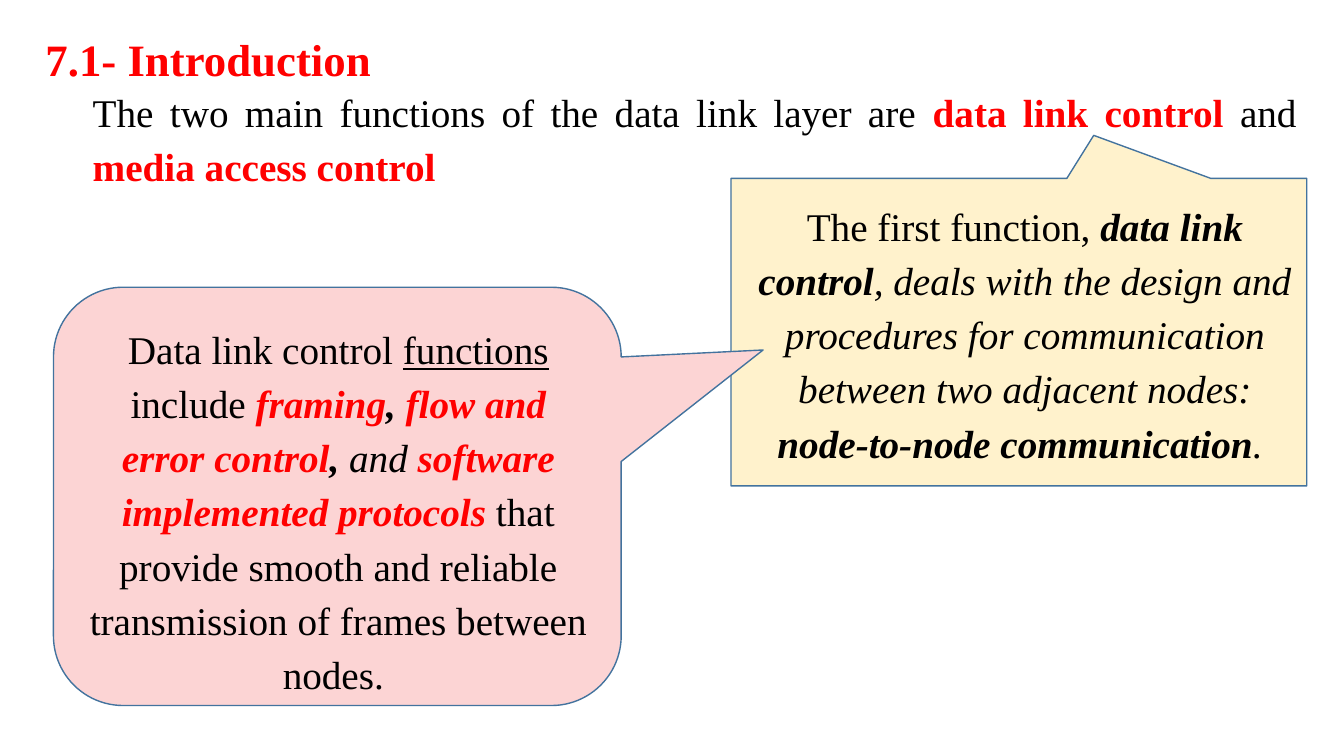
"""Build the introduction slide on the data link layer."""
from lxml.etree import SubElement
from pptx import Presentation
from pptx.dml.color import RGBColor as Rgb
from pptx.enum.shapes import MSO_SHAPE as Shape
from pptx.enum.text import MSO_ANCHOR as Anchor, PP_ALIGN as Align
from pptx.oxml.ns import qn
from pptx.util import Inches, Pt

WIDE, HIGH = Inches(13.33), Inches(7.5)
FONT = "Times New Roman"
HUES = {"ink": "000000", "key": "FF0000", "edge": "43739E",
        "sand": "FFF2CC", "rose": "FCD4D4"}

TITLE = [("7.1- Introduction", "br")]
LEAD = [("The two main functions of the data link layer are ", ""),
        ("data link control ", "br"), ("and ", ""),
        ("media access control ", "br")]
FIRST = [("The first function, ", ""), ("data link control", "bi"),
         (", deals with the design and procedures for communication "
          "between two adjacent nodes: ", "i"),
         ("node-to-node communication", "bi"), (". ", "i")]
TASKS = [("Data link control ", ""), ("functions", "u"), (" include ", ""),
         ("framing", "bir"), (", ", "bi"), ("flow and error control", "bir"),
         (", ", "bi"), ("and ", "i"),
         ("software implemented protocols", "bir"),
         (" that provide smooth and reliable transmission of frames "
          "between nodes. ", "")]


def hue(name):
    """Return the named colour."""
    return Rgb.from_string(HUES[name])


def area(left, top, width, height):
    """Turn percentages of the slide into lengths."""
    return [int(part * side / 100) for part, side in
            zip((left, top, width, height), (WIDE, HIGH) * 2)]


def write(frame, runs, size=28, space=1.15, align=Align.JUSTIFY, wrap=True):
    """Fill a frame with runs flagged b(old), i(talic), u(nderlined), r(ed)."""
    frame.word_wrap = wrap
    frame.vertical_anchor = Anchor.TOP
    para = frame.paragraphs[0]
    para.alignment = align
    para.line_spacing = space
    para.space_before = Pt(0)
    for text, flags in runs:
        run = para.add_run()
        run.text = text
        font = run.font
        font.name, font.size = FONT, Pt(size)
        font.bold, font.italic = "b" in flags, "i" in flags
        font.underline = "u" in flags
        font.color.rgb = hue("key" if "r" in flags else "ink")


def place(holder, spot):
    """Move a placeholder to its spot."""
    holder.left, holder.top, holder.width, holder.height = area(*spot)


def plain(frame):
    """Drop the bullet and indent of a body frame."""
    props = frame.paragraphs[0]._p.get_or_add_pPr()
    props.set("marL", "0")
    props.set("indent", "0")
    SubElement(props, qn("a:buNone"))


def callout(slide, kind, spot, tip, fill, inner, runs):
    """Group a callout shape with the text inside it."""
    group = slide.shapes.add_group_shape()
    shape = group.shapes.add_shape(kind, *area(*spot))
    shape.shadow.inherit = False
    shape.adjustments[0], shape.adjustments[1] = tip
    shape.fill.solid()
    shape.fill.fore_color.rgb = hue(fill)
    shape.line.color.rgb = hue("edge")
    shape.line.width = Pt(1)
    box = group.shapes.add_textbox(*area(*inner))
    write(box.text_frame, runs, align=Align.CENTER)


def main():
    """Build and save the slide."""
    deck = Presentation()
    deck.slide_width, deck.slide_height = WIDE, HIGH
    slide = deck.slides.add_slide(deck.slide_layouts[1])
    title, body = slide.placeholders
    place(title, (2.63, 0, 25.96, 10.93))
    write(title.text_frame, TITLE, size=32, space=1.5, wrap=False)
    place(body, (6.15, 10.13, 91.07, 15.73))
    write(body.text_frame, LEAD)
    plain(body.text_frame)
    callout(slide, Shape.RECTANGULAR_CALLOUT, (54.39, 23.6, 42.84, 40.67),
            (0.13, -0.64), "sand", (55.29, 25.2, 41.94, 37.47), FIRST)
    callout(slide, Shape.ROUNDED_RECTANGULAR_CALLOUT,
            (3.98, 38, 42.24, 55.33), (0.75, -0.35), "rose",
            (5.78, 41.47, 38.78, 51.87), TASKS)
    deck.save("out.pptx")


if __name__ == "__main__":
    main()
